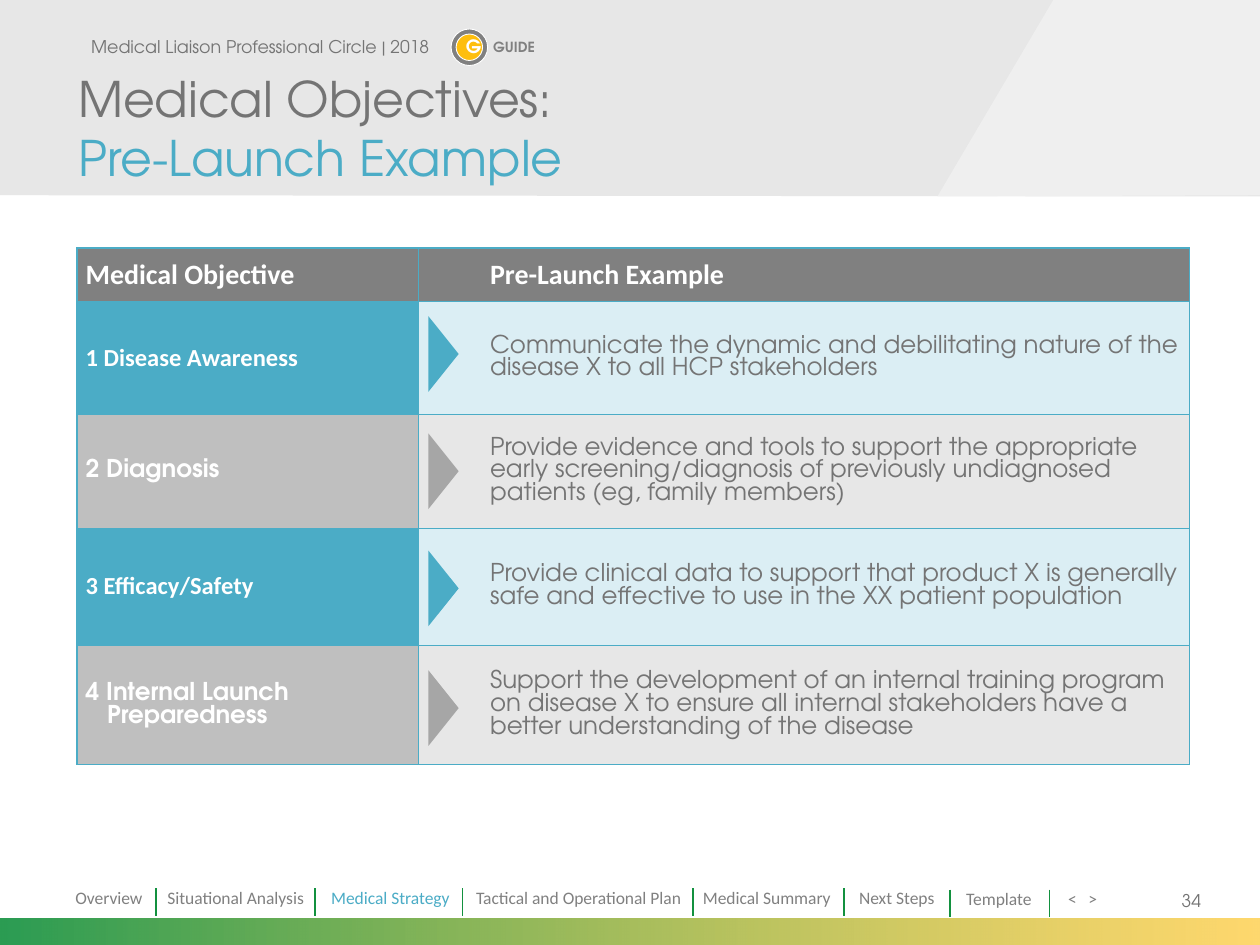
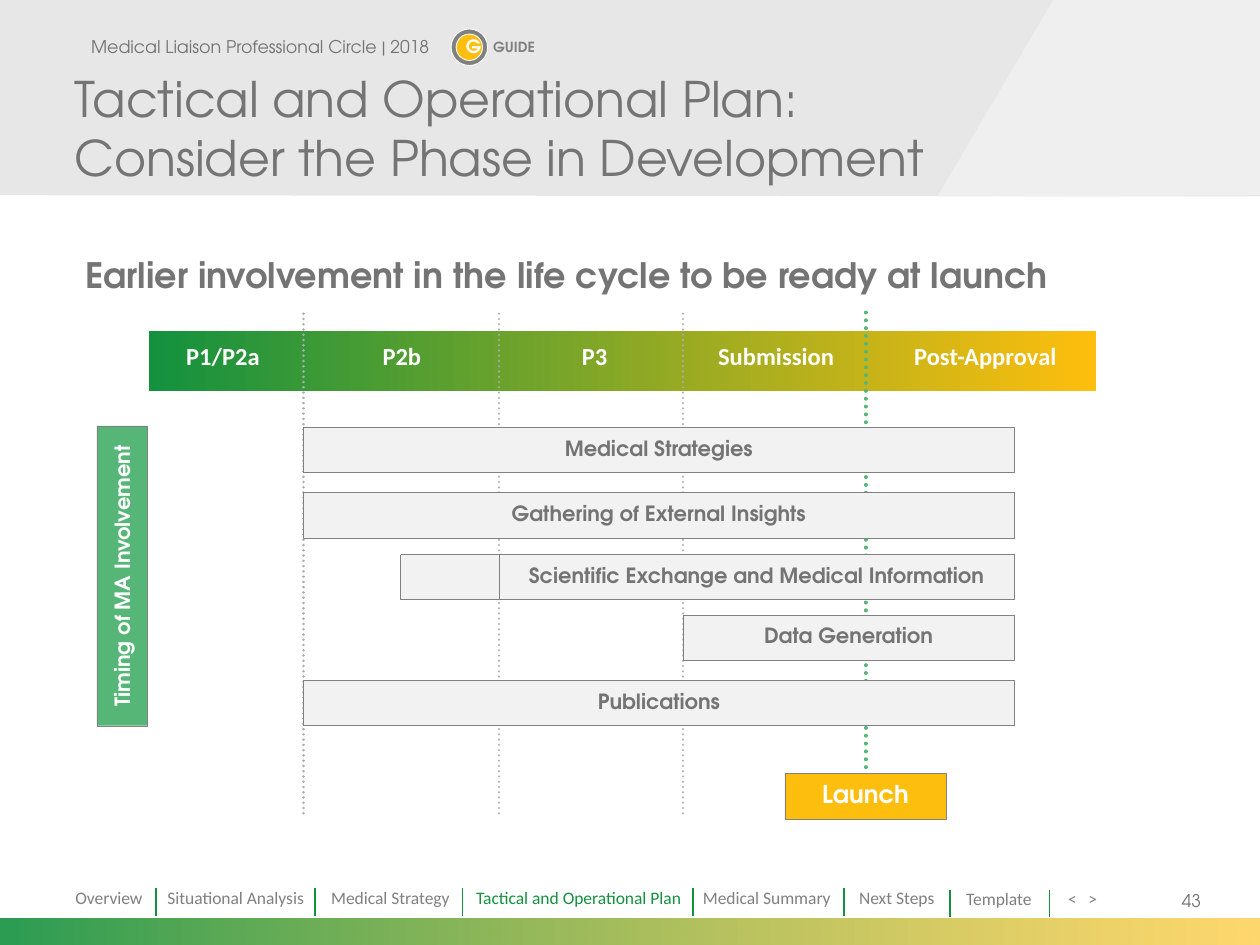
from lxml import etree
from pptx import Presentation
from pptx.dml.color import RGBColor
from pptx.enum.dml import MSO_LINE
from pptx.enum.shapes import MSO_CONNECTOR, MSO_SHAPE
from pptx.enum.text import MSO_ANCHOR, MSO_AUTO_SIZE, PP_ALIGN
from pptx.oxml.ns import qn
from pptx.util import Inches, Pt

RECTANGLE, OVAL, TRIANGLE = MSO_SHAPE.RECTANGLE, MSO_SHAPE.OVAL, MSO_SHAPE.ISOSCELES_TRIANGLE
STRAIGHT, DOTTED = MSO_CONNECTOR.STRAIGHT, MSO_LINE.ROUND_DOT
LEFT, CENTER, RIGHT = PP_ALIGN.LEFT, PP_ALIGN.CENTER, PP_ALIGN.RIGHT
TOP, MIDDLE, BOTTOM = MSO_ANCHOR.TOP, MSO_ANCHOR.MIDDLE, MSO_ANCHOR.BOTTOM
TOP_SITE = 0

DISPLAY, PLAIN = "TeX Gyre Adventor", "Calibri"
WHITE = RGBColor(0xFF, 0xFF, 0xFF)
TEXT_GRAY = RGBColor(0x74, 0x74, 0x74)
MID_GRAY = RGBColor(0x80, 0x80, 0x80)
ARROW_GRAY = RGBColor(0xA6, 0xA6, 0xA6)
DOT_GRAY = RGBColor(0xAD, 0xAD, 0xAD)
LABEL_GRAY = RGBColor(0xBF, 0xBF, 0xBF)
HEADER_GRAY = RGBColor(0xD9, 0xD9, 0xD9)
ROW_GRAY = RGBColor(0xE7, 0xE7, 0xE7)
PALE_GRAY = RGBColor(0xF2, 0xF2, 0xF2)
BLUE = RGBColor(0x4B, 0xAC, 0xC6)
PALE_BLUE = RGBColor(0xDB, 0xEE, 0xF4)
GREEN = RGBColor(0x13, 0x91, 0x3F)
LIGHT_GREEN = RGBColor(0x56, 0xB6, 0x77)
YELLOW = RGBColor(0xFE, 0xBE, 0x0D)

# Shared content
SOCIETY = "Medical Liaison Professional Circle | 2018"
HEADER_BANDS = [  # outline, colour, opacity in percent
    ([(0, 0), (10, 0), (10, 1.56), (0, 1.55)], HEADER_GRAY, 62),
    ([(8.36, 0), (10, 0), (10, 1.55), (7.44, 1.56)], PALE_GRAY, 79),
]
NAVIGATION = [  # label, left, top, width
    ("Overview", 0.5, 6.99, 0.85),
    ("Situational Analysis", 1.23, 6.99, 1.32),
    ("Medical Strategy", 2.53, 6.99, 1.17),
    ("Tactical and Operational Plan", 3.68, 6.99, 1.89),
    ("Medical Summary", 5.48, 6.99, 1.25),
    ("Next Steps", 6.72, 6.99, 0.86),
    ("Template", 7.57, 7, 0.75),
    ("<", 8.38, 7, 0.3),
    (">", 8.54, 7, 0.3),
]
DIVIDERS = [(1.24, 7.05), (2.5, 7.05), (3.67, 7.05), (5.5, 7.05), (6.7, 7.05),
            (7.54, 7.06), (8.33, 7.06)]

# Objectives table content
TABLE_HEADINGS = ("Medical Objective", "Pre-Launch Example")
OBJECTIVES = [  # objective, font, example, middle of the arrow
    ("1 Disease Awareness", PLAIN,
     "Communicate the dynamic and debilitating nature of the disease X to all HCP "
     "stakeholders", 2.81),
    ("2 Diagnosis", DISPLAY,
     "Provide evidence and tools to support the appropriate early screening/diagnosis of "
     "previously undiagnosed patients (eg, family members)", 3.74),
    ("3 Efficacy/Safety", PLAIN,
     "Provide clinical data to support that product X is generally safe and effective to "
     "use in the XX patient population", 4.67),
    ("4 Internal Launch\nPreparedness", DISPLAY,
     "Support the development of an internal training program on disease X to ensure all "
     "internal stakeholders have a better understanding of the disease", 5.62),
]
ROW_LOOKS = [(BLUE, PALE_BLUE, BLUE), (LABEL_GRAY, ROW_GRAY, ARROW_GRAY)]
COLUMN_WIDTHS = (2.71, 6.12)
ROW_HEIGHTS = (0.42, 0.9, 0.9, 0.93, 0.95)

# Timeline content
PHASES = [("P1/P2a", 1.09, 1.36), ("P2b", 2.51, 1.36), ("P3", 4.04, 1.36),
          ("Submission", 5.43, 1.46), ("Post-Approval", 7.03, 1.58)]
P2B_START, P3_START, SUBMISSION_START, LAUNCH = 2.41, 3.96, 5.42, 6.87
ACTIVITY_END = 8.05
ACTIVITIES = [  # label, start, top
    ("Medical Strategies", P2B_START, 3.39),
    ("Gathering of External Insights", P2B_START, 3.91),
    ("Scientific Exchange and Medical Information", P3_START, 4.4),
    ("Data Generation", SUBMISSION_START, 4.88),
    ("Publications", P2B_START, 5.4),
]


def write(frame, spans, size, font=DISPLAY, bold=False, align=LEFT, anchor=TOP, spacing=None):
    """Fill a text frame with (text, colour) spans; a newline is a line break."""
    frame.vertical_anchor = anchor
    para = frame.paragraphs[0]
    para.alignment = align
    if spacing:
        para.line_spacing = spacing
    for text, color in spans:
        for number, line in enumerate(text.split("\n")):
            if number:
                para.add_line_break()
            if line:
                span = para.add_run()
                span.text = line
                span.font.name, span.font.size, span.font.bold = font, Pt(size), bold
                span.font.color.rgb = color
    return para


def add_text(page, place, text, size, color, **style):
    box = page.shapes.add_textbox(*map(Inches, place))
    box.text_frame.word_wrap = True
    write(box.text_frame, [(text, color)], size, **style)
    return box


def set_opacity(colors, percents):
    for color, percent in zip(colors, percents):
        etree.SubElement(color, qn("a:alpha")).set("val", str(percent * 1000))


def paint(shape, fill, outline=None, width=0.25):
    shape.shadow.inherit = False
    shape.fill.solid()
    shape.fill.fore_color.rgb = fill
    if outline is None:
        shape.line.fill.background()
    else:
        shape.line.color.rgb = outline
        shape.line.width = Pt(width)


def add_block(page, kind, place, fill, outline=None, width=0.25):
    block = page.shapes.add_shape(kind, *map(Inches, place))
    paint(block, fill, outline, width)
    return block


def add_gradient(page, place):
    band = add_block(page, RECTANGLE, place, GREEN)
    band.fill.gradient()
    band.fill.gradient_angle = 0
    for stop, color in zip(band.fill.gradient_stops, (GREEN, YELLOW)):
        stop.color.rgb = color
    return band


def add_vertical(page, x, top, bottom, color, width, dash=None):
    line = page.shapes.add_connector(
        STRAIGHT, Inches(x), Inches(top), Inches(x), Inches(bottom))
    line.line.color.rgb = color
    line.line.width = Pt(width)
    if dash:
        line.line.dash_style = dash
        line._element.spPr.find(qn("a:ln")).set("cap", "rnd")
    etree.SubElement(line._element.spPr, qn("a:effectLst"))
    return line


def add_page(deck, title, place, number, active, active_color):
    """Start a slide with header, badge, navigation, footer and title."""
    page = deck.slides.add_slide(deck.slide_layouts[5])

    # Header bands
    for outline, color, percent in HEADER_BANDS:
        points = [(Inches(x), Inches(y)) for x, y in outline]
        builder = page.shapes.build_freeform(*points[0], scale=1.0)
        builder.add_line_segments(points[1:], close=True)
        band = builder.convert_to_shape()
        paint(band, color)
        set_opacity(band._element.spPr.iter(qn("a:srgbClr")), [percent])

    # Footer band and page number
    footer = add_gradient(page, (0, 7.29, 10, 0.21))
    set_opacity(footer._element.spPr.iter(qn("a:srgbClr")), [90, 60])
    add_text(page, (8.95, 6.95, 0.68, 0.4), number, 10, TEXT_GRAY, align=RIGHT, anchor=MIDDLE)

    # Navigation
    for label, left, top, width in NAVIGATION:
        color = active_color if label == active else MID_GRAY
        add_text(page, (left, top, width, 0.27), label, 10, color, font=PLAIN)
    for x, top in DIVIDERS:
        add_vertical(page, x, top, top + 0.22, GREEN, 1)

    # Society line and guide badge
    add_text(page, (0.48, 0.17, 3.17, 0.4), SOCIETY, 10, TEXT_GRAY, align=CENTER, anchor=MIDDLE)
    add_block(page, OVAL, (3.58, 0.23, 0.29, 0.29), MID_GRAY, WHITE, 0.5)
    add_block(page, OVAL, (3.62, 0.27, 0.21, 0.21), YELLOW, WHITE, 0.5)
    add_text(page, (3.6, 0.23, 0.27, 0.25), "G", 10.5, WHITE, bold=True, align=CENTER)
    add_text(page, (3.73, 0.26, 0.7, 0.24), "GUIDE", 8, MID_GRAY, bold=True, align=CENTER)

    # Title, moved in front of the header bands
    heading = page.shapes.title
    heading._element.getparent().append(heading._element)
    heading.left, heading.top, heading.width, heading.height = map(Inches, place)
    heading.text_frame.auto_size = MSO_AUTO_SIZE.NONE
    heading.text_frame.word_wrap = True
    write(heading.text_frame, title, 28, anchor=BOTTOM)
    return page


def set_borders(cell, widths):
    """Add left, right, top and bottom borders ahead of the cell fill."""
    properties = cell._tc.get_or_add_tcPr()
    for position, (side, width) in enumerate(zip("LRTB", widths)):
        border = etree.Element(qn(f"a:ln{side}"), w=str(Pt(width)))
        fill = etree.SubElement(border, qn("a:solidFill"))
        etree.SubElement(fill, qn("a:srgbClr"), val=str(BLUE))
        properties.insert(position, border)


def fill_cell(cell, text, fill, color, size, indent, hanging=0, **style):
    cell.fill.solid()
    cell.fill.fore_color.rgb = fill
    cell.margin_left = cell.margin_right = Inches(0.07)
    cell.margin_top = cell.margin_bottom = Inches(0.04)
    para = write(cell.text_frame, [(text, color)], size, **style)
    cell.vertical_anchor = MIDDLE
    properties = para._p.get_or_add_pPr()
    properties.set("marL", str(Inches(indent)))
    properties.set("indent", str(-Inches(hanging)))


def build_objectives(deck):
    title = [("Medical Objectives:\n", TEXT_GRAY), ("Pre-Launch Example", BLUE)]
    page = add_page(deck, title, (0.52, 0.03, 7.5, 1.5), "34", "Medical Strategy", BLUE)

    # Table grid
    row_count, column_count = len(ROW_HEIGHTS), len(COLUMN_WIDTHS)
    table = page.shapes.add_table(
        row_count, column_count, Inches(0.61), Inches(1.97),
        Inches(sum(COLUMN_WIDTHS)), Inches(sum(ROW_HEIGHTS))).table
    table.first_row = table.horz_banding = False
    for column, width in zip(table.columns, COLUMN_WIDTHS):
        column.width = Inches(width)
    for row, height in zip(table.rows, ROW_HEIGHTS):
        row.height = Inches(height)

    # Cells and arrows
    for column, (text, indent) in enumerate(zip(TABLE_HEADINGS, (0, 0.5))):
        fill_cell(table.cell(0, column), text, MID_GRAY, WHITE, 16, indent, font=PLAIN, bold=True)
    for row, (objective, font, example, middle) in enumerate(OBJECTIVES, 1):
        label_fill, example_fill, arrow_fill = ROW_LOOKS[(row - 1) % 2]
        fill_cell(table.cell(row, 0), objective, label_fill, WHITE, 14, 0.17, 0.17,
                  font=font, bold=True)
        fill_cell(table.cell(row, 1), example, example_fill, TEXT_GRAY, 14, 0.5)
        arrow = add_block(page, TRIANGLE, (3.22, middle - 0.12, 0.6, 0.24), arrow_fill)
        arrow.rotation = 90

    # Borders: heavier at the left, right and top edges
    for row in range(row_count):
        for column in range(column_count):
            heavy = (column == 0, column == column_count - 1, row == 0, False)
            set_borders(table.cell(row, column), [1 if edge else 0.5 for edge in heavy])


def build_timeline(deck):
    title = [("Tactical and Operational Plan:\nConsider the Phase in Development", TEXT_GRAY)]
    page = add_page(deck, title, (0.49, 0, 7.5, 1.53), "43",
                    "Tactical and Operational Plan", GREEN)
    heading = add_text(page, (0.53, 1.96, 7.94, 0.44),
                       "Earlier involvement in the life cycle to be ready at launch",
                       20, TEXT_GRAY, bold=True, align=CENTER)
    heading.text_frame.word_wrap = False

    # Phase band with the launch marker
    add_gradient(page, (1.18, 2.63, 7.52, 0.47))
    launch = add_block(page, RECTANGLE, (LAUNCH - 0.64, 6.14, 1.28, 0.36), YELLOW, MID_GRAY)
    write(launch.text_frame, [("Launch", WHITE)], 14, bold=True, align=CENTER,
          anchor=MIDDLE, spacing=0.85)
    launch_line = add_vertical(page, LAUNCH, 2.48, 6.14, LIGHT_GREEN, 2.25, DOTTED)
    launch_line.end_connect(launch, TOP_SITE)
    for label, left, width in PHASES:
        add_text(page, (left, 2.66, width, 0.34), label, 14, WHITE,
                 font=PLAIN, bold=True, align=CENTER)
    for x in (P2B_START, P3_START, SUBMISSION_START):
        add_vertical(page, x, 2.49, 6.48, DOT_GRAY, 1.5, DOTTED)

    # Side label
    side = add_block(page, RECTANGLE, (-0.22, 4.37, 2.38, 0.4), LIGHT_GREEN, MID_GRAY)
    side.rotation = 270
    write(side.text_frame, [("Timing of MA Involvement", WHITE)], 12, bold=True,
          align=CENTER, anchor=MIDDLE)

    # Activity bars
    for label, start, top in ACTIVITIES:
        bar = add_block(page, RECTANGLE, (start, top, ACTIVITY_END - start, 0.36),
                        PALE_GRAY, MID_GRAY)
        write(bar.text_frame, [(label, TEXT_GRAY)], 12, bold=True, align=CENTER,
              anchor=MIDDLE, spacing=0.85)
    early = add_block(page, RECTANGLE, (3.18, 4.4, P3_START - 3.18, 0.36), PALE_GRAY, MID_GRAY)
    early.line.dash_style = DOTTED


def main():
    deck = Presentation()
    deck.slide_width, deck.slide_height = Inches(10), Inches(7.5)
    build_objectives(deck)
    build_timeline(deck)
    deck.save("out.pptx")


if __name__ == "__main__":
    main()
